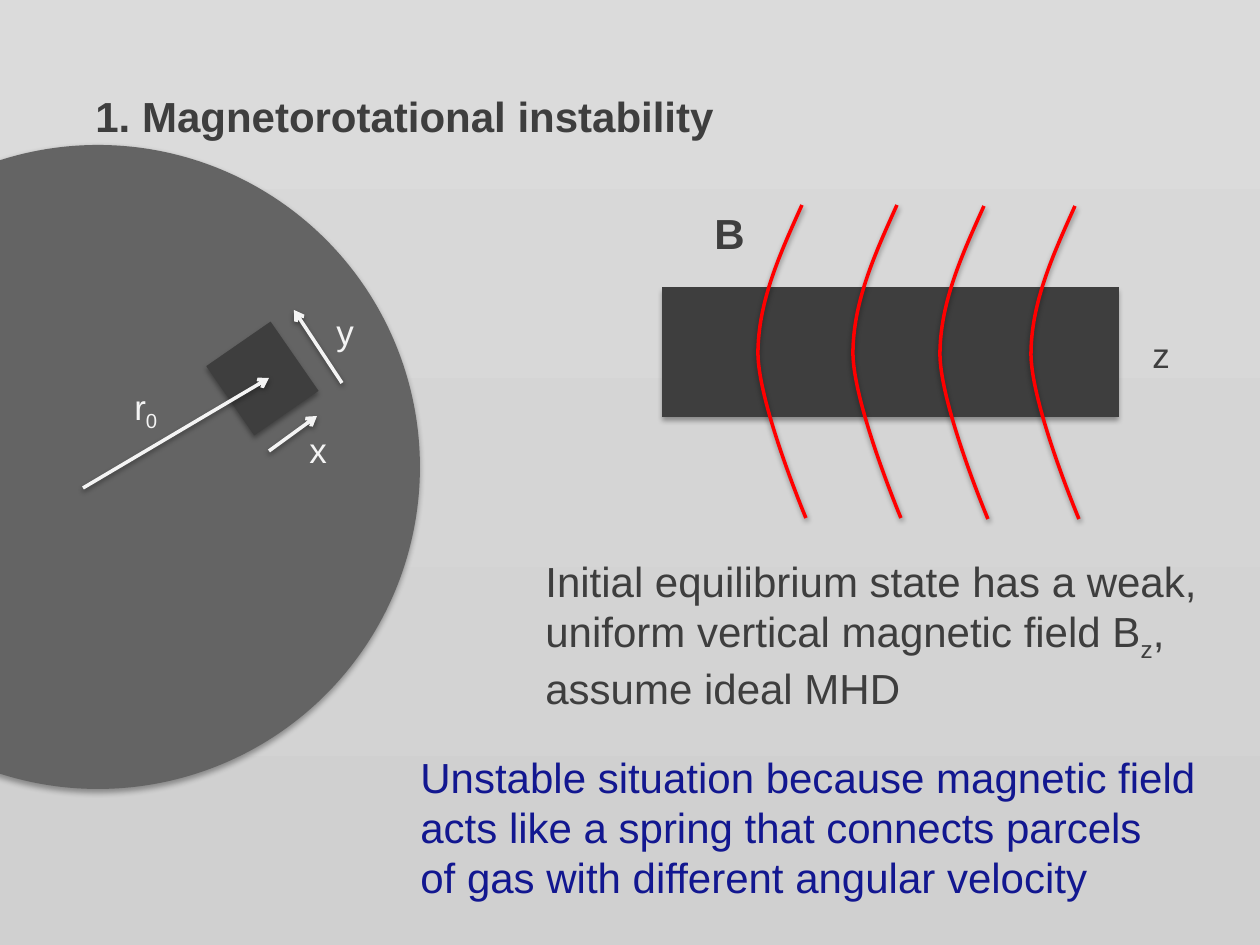
from dataclasses import dataclass

from lxml.etree import SubElement
from pptx import Presentation
from pptx.dml.color import RGBColor
from pptx.enum.shapes import MSO_CONNECTOR, MSO_SHAPE
from pptx.enum.text import MSO_AUTO_SIZE
from pptx.oxml.ns import qn
from pptx.util import Emu, Pt

EMU_PER_PX = 914400 / 126


@dataclass(frozen=True)
class Theme:
    font: str = "Arial"
    body_size: int = 24
    label_size: int = 20
    dark: str = "3E3E3E"
    disk: str = "646464"
    light: str = "F4F4F4"
    field: str = "FF0000"
    accent: str = "121790"
    sky_top: str = "DBDBDB"
    sky_bottom: str = "D0D0D0"
    shadow: str = "000000"
    stroke: float = 2
    outline: float = 0.75


THEME = Theme()

# Control points of two cubic curves, relative to the top end of a field line.
FIELD_CURVE = [(-22, 49), (-44, 97), (-44, 149), (-43, 201), (4, 313), (4, 313)]
FIELD_TOPS = [(897, 205), (802, 205), (984, 206), (1075, 206)]


def px(length):
    return Emu(round(length * EMU_PER_PX))


def color(code):
    return RGBColor.from_string(code)


def set_background(page):
    fill = page.background.fill
    fill.gradient()
    fill.gradient_angle = 270
    for stop, code, position in zip(
        fill.gradient_stops, (THEME.sky_top, THEME.sky_bottom), (0, 1)
    ):
        stop.color.rgb = color(code)
        stop.position = position


def set_line(shape, code, width):
    shape.line.color.rgb = color(code)
    shape.line.width = Pt(width)


def add_shadow(shape, opacity=35, distance=1.8):
    """Drop a soft shadow straight down; call after fill and line are set."""
    effects = SubElement(shape._element.spPr, qn("a:effectLst"))
    shadow = SubElement(
        effects, qn("a:outerShdw"), blurRad=str(Pt(3.1)),
        dist=str(Pt(distance)), dir="5400000", rotWithShape="0",
    )
    tint = SubElement(shadow, qn("a:srgbClr"), val=THEME.shadow)
    SubElement(tint, qn("a:alpha"), val=str(opacity * 1000))


def add_solid(page, kind, bounds, fill, outlined=True, rotation=0):
    shape = page.shapes.add_shape(kind, *map(px, bounds))
    shape.rotation = rotation
    shape.fill.solid()
    shape.fill.fore_color.rgb = color(fill)
    if outlined:
        set_line(shape, fill, THEME.outline)
        SubElement(shape.line._get_or_add_ln(), qn("a:miter"), lim="800000")
    else:
        shape.line.fill.background()
    add_shadow(shape)


def add_arrow(page, start, end):
    arrow = page.shapes.add_connector(
        MSO_CONNECTOR.STRAIGHT, *map(px, (*start, *end))
    )
    set_line(arrow, THEME.light, THEME.stroke)
    SubElement(arrow.line._get_or_add_ln(), qn("a:tailEnd"), type="arrow")
    add_shadow(arrow, 38, 1.6)


def bend_segments(shape):
    """Turn each three straight segments of an outline into one cubic curve."""
    outline = next(shape._element.iter(qn("a:path")))
    segments = outline.findall(qn("a:lnTo"))
    for index, segment in enumerate(segments):
        if index % 3 == 0:
            curve = SubElement(outline, qn("a:cubicBezTo"))
        curve.append(segment[0])
        outline.remove(segment)


def add_field_line(page, left, top):
    builder = page.shapes.build_freeform(px(left), px(top))
    builder.add_line_segments(
        [(px(left + x), px(top + y)) for x, y in FIELD_CURVE], close=False
    )
    line = builder.convert_to_shape()
    bend_segments(line)
    line.fill.background()
    set_line(line, THEME.field, THEME.stroke)
    add_shadow(line, 38, 1.6)


def add_text(page, bounds, lines, code, size, bold=False):
    """Write lines; a line may be a list whose every second part is a subscript."""
    box = page.shapes.add_textbox(*map(px, bounds))
    frame = box.text_frame
    frame.word_wrap = False
    frame.auto_size = MSO_AUTO_SIZE.SHAPE_TO_FIT_TEXT
    for number, line in enumerate(lines):
        para = frame.add_paragraph() if number else frame.paragraphs[0]
        for index, part in enumerate([line] if isinstance(line, str) else line):
            span = para.add_run()
            span.text = part
            span.font.name = THEME.font
            span.font.size = Pt(size)
            span.font.bold = bold
            span.font.color.rgb = color(code)
            if index % 2:
                span._r.get_or_add_rPr().set("baseline", "-25000")


def add_label(page, bounds, line, code):
    add_text(page, bounds, [line], code, THEME.label_size)


def draw_disk(page):
    add_solid(page, MSO_SHAPE.OVAL, (-224, 145, 644, 644), THEME.disk, outlined=False)
    add_solid(page, MSO_SHAPE.RECTANGLE, (224, 337, 77, 83), THEME.dark, rotation=325.3)
    add_arrow(page, (83, 488), (269, 378))
    add_label(page, (122, 379, 50, 55), ["r", "0"], THEME.light)
    add_arrow(page, (269, 451), (317, 416))
    add_arrow(page, (342, 383), (294, 310))
    add_label(page, (297, 422, 45, 55), "x", THEME.light)
    add_label(page, (324, 304, 45, 55), "y", THEME.light)


def draw_field(page):
    add_solid(page, MSO_SHAPE.RECTANGLE, (663, 288, 455, 128), THEME.dark)
    for left, top in FIELD_TOPS:
        add_field_line(page, left, top)
    add_text(page, (702, 201, 57, 63), ["B"], THEME.dark, THEME.body_size, bold=True)
    add_label(page, (1140, 327, 43, 55), "z", THEME.dark)


def main():
    deck = Presentation()
    deck.slide_width, deck.slide_height = px(1260), px(945)
    page = deck.slides.add_slide(deck.slide_layouts[6])
    set_background(page)
    add_text(
        page, (83, 84, 651, 63), ["1. Magnetorotational instability"],
        THEME.dark, THEME.body_size, bold=True,
    )
    draw_disk(page)
    draw_field(page)
    add_text(
        page, (533, 549, 683, 165),
        [
            "Initial equilibrium state has a weak,",
            ["uniform vertical magnetic field B", "z", ","],
            "assume ideal MHD",
        ],
        THEME.dark, THEME.body_size,
    )
    add_text(
        page, (408, 745, 808, 165),
        [
            "Unstable situation because magnetic field",
            "acts like a spring that connects parcels",
            "of gas with different angular velocity",
        ],
        THEME.accent, THEME.body_size,
    )
    deck.save("out.pptx")


if __name__ == "__main__":
    main()
